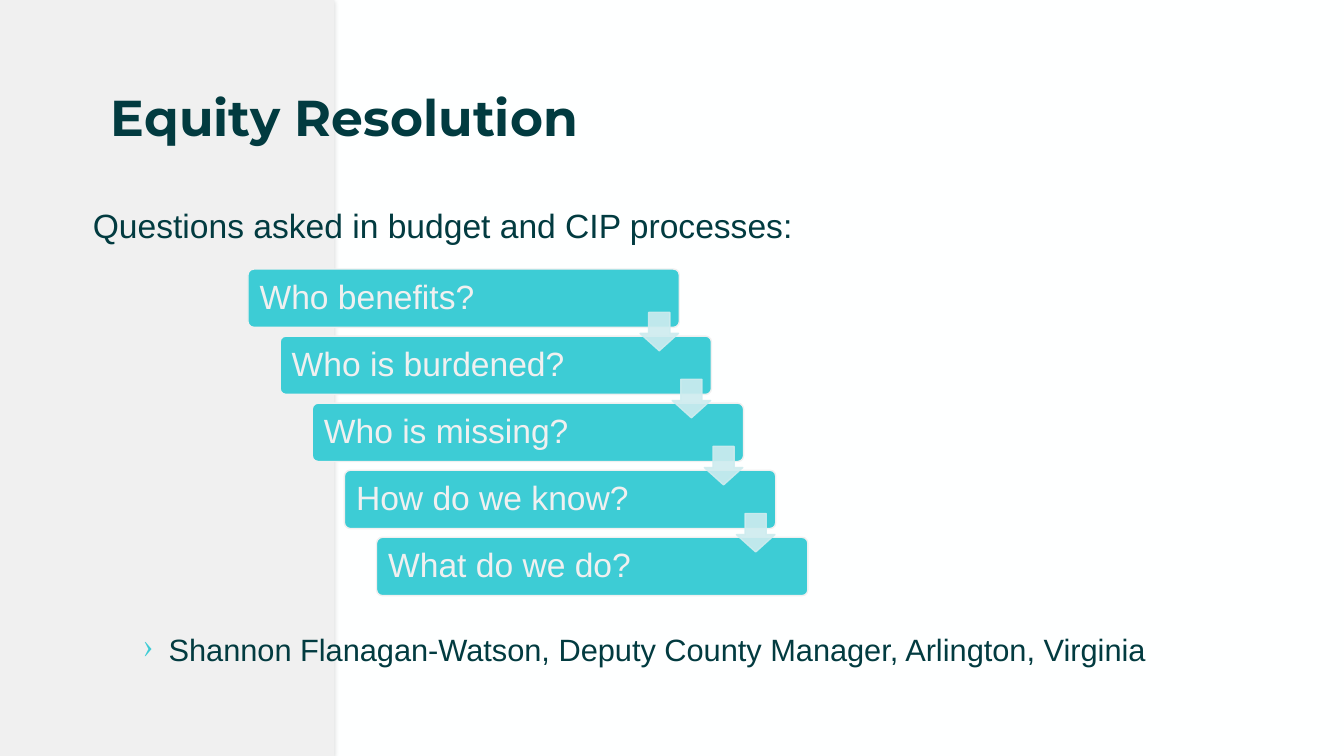
from lxml.etree import SubElement
from pptx import Presentation
from pptx.dml.color import RGBColor
from pptx.enum.shapes import MSO_SHAPE as Shape
from pptx.enum.text import MSO_ANCHOR as Anchor, PP_ALIGN as Align
from pptx.oxml import parse_xml
from pptx.oxml.ns import nsdecls, qn
from pptx.util import Cm, Pt

TITLE = "Equity Resolution"
INTRO = "Questions asked in budget and CIP processes:"
QUESTIONS = [
    "Who benefits?",
    "Who is burdened?",
    "Who is missing?",
    "How do we know?",
    "What do we do?",
]
SPEAKER = "Shannon Flanagan-Watson, Deputy County Manager, Arlington, Virginia"

DARK, TEAL, GREY, PALE, PAPER = "023B40", "3DCCD5", "F0F0F0", "CEECEF", "FEFFFF"
STEP_X, STEP_Y = 0.81, 1.69
BAR_LEFT, BAR_TOP, BAR_WIDTH, BAR_HEIGHT = 6.25, 6.78, 10.87, 1.47
ARROW_LEFT, ARROW_TOP, ARROW_SIZE = 16.13, 7.87, 0.97


def color(value):
    return RGBColor.from_string(value)


def paint(fill, value):
    fill.solid()
    fill.fore_color.rgb = color(value)


def add_form(kind, left, top, width, height, fill, line=None):
    form = page.shapes.add_shape(kind, Cm(left), Cm(top), Cm(width), Cm(height))
    form.shadow.inherit = False
    paint(form.fill, fill)
    if line:
        paint(form.line.fill, line)
        form.line.width = Pt(1)
    else:
        form.line.fill.background()
    return form


def write(form, text, size, value, inset=0, font="Arial", bold=False):
    frame = form.text_frame
    frame.word_wrap = True
    frame.margin_left = frame.margin_right = Cm(inset)
    frame.margin_top = frame.margin_bottom = Cm(inset)
    para = frame.paragraphs[0]
    para.text = text
    para.alignment = Align.LEFT
    para.font.name = font
    para.font.size = Pt(size)
    para.font.bold = bold
    para.font.color.rgb = color(value)
    return para


def add_text(left, top, width, height, *content, **style):
    box = page.shapes.add_textbox(Cm(left), Cm(top), Cm(width), Cm(height))
    return write(box, *content, **style)


def add_bullet(para, symbol, value):
    props = para._p.get_or_add_pPr()
    props.set("marL", str(Cm(0.64)))
    props.set("indent", str(-Cm(0.64)))
    tint = parse_xml(f'<a:buClr {nsdecls("a")}><a:srgbClr val="{value}"/></a:buClr>')
    mark = parse_xml(f'<a:buChar {nsdecls("a")} char="{symbol}"/>')
    props.insert(0, tint)
    props.insert(1, mark)


def add_soft_shadow(form):
    effects = form._element.spPr.find(qn("a:effectLst"))
    effects.append(parse_xml(
        f'<a:outerShdw {nsdecls("a")} blurRad="{Pt(3)}" dist="{Pt(1)}" dir="5400000">'
        '<a:srgbClr val="000000"><a:alpha val="15000"/></a:srgbClr></a:outerShdw>'))


deck = Presentation()
deck.slide_width, deck.slide_height = Cm(33.87), Cm(19.05)
page = deck.slides.add_slide(deck.slide_layouts[6])
paint(page.background.fill, PAPER)

panel = add_form(Shape.RECTANGLE, 0, 0, 8.43, 19.05, GREY)
add_soft_shadow(panel)

add_text(2.79, 2.16, 28.27, 2.95, TITLE, 36, DARK, font="Montserrat", bold=True)
add_text(2.34, 5.16, 29.21, 1.2, INTRO, 24, DARK)
speaker = add_text(3.61, 15.9, 27.94, 1.2, SPEAKER, 22, DARK)
add_bullet(speaker, "›", TEAL)

for index, question in enumerate(QUESTIONS):
    bar = add_form(Shape.ROUNDED_RECTANGLE, BAR_LEFT + index * STEP_X,
                   BAR_TOP + index * STEP_Y, BAR_WIDTH, BAR_HEIGHT, TEAL, GREY)
    bar.adjustments[0] = 0.1
    bar.text_frame.vertical_anchor = Anchor.MIDDLE
    write(bar, question, 24, GREY, inset=0.25).line_spacing = 0.9

for index in range(len(QUESTIONS) - 1):
    arrow = add_form(Shape.DOWN_ARROW, ARROW_LEFT + index * STEP_X,
                     ARROW_TOP + index * STEP_Y, ARROW_SIZE, ARROW_SIZE, PALE, PALE)
    arrow.adjustments[0], arrow.adjustments[1] = 0.55, 0.45
    for tint in arrow._element.spPr.iter(qn("a:srgbClr")):
        SubElement(tint, qn("a:alpha")).set("val", "90000")

deck.save("out.pptx")
